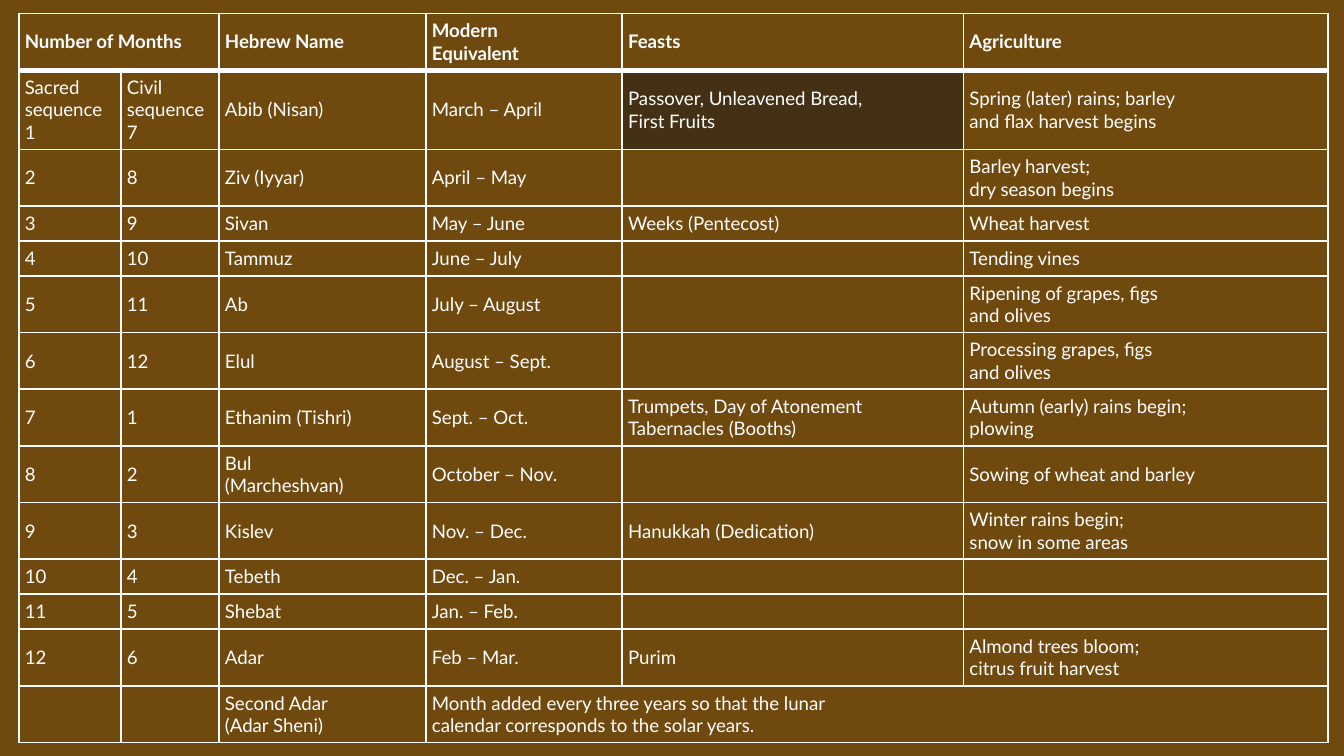
from typing import NamedTuple

from lxml import etree
from pptx import Presentation
from pptx.dml.color import RGBColor
from pptx.enum import text
from pptx.oxml import ns
from pptx.util import Inches, Pt

BROWN = RGBColor(0x70, 0x49, 0x0F)
DARK = RGBColor(0x19, 0x19, 0x19)
WHITE = RGBColor(0xFF, 0xFF, 0xFF)

FONT_NAME = "Lato"
FONT_SIZE = Pt(10)
MARGIN = Pt(3.2)
COLUMN_WIDTHS = (0.76, 0.73, 1.54, 1.46, 2.54, 2.71)
# Row height by the number of text lines in its tallest cell
ROW_HEIGHTS = {1: 0.26, 2: 0.42, 3: 0.59}
HIGHLIGHT = (1, 4)


class Month(NamedTuple):
    sacred: str
    civil: str
    hebrew: str
    modern: str
    feasts: str = ""
    agriculture: str = ""


# "\n" starts a paragraph, "\v" breaks a line
CALENDAR = [
    Month("Number of Months", "", "Hebrew Name", "Modern \vEquivalent",
          "Feasts", "Agriculture"),
    Month("Sacred\vsequence\n1", "Civil\vsequence\n7", "Abib (Nisan)", "March – April",
          "Passover, Unleavened Bread, \vFirst Fruits",
          "Spring (later) rains; barley \vand flax harvest begins"),
    Month("2", "8", "Ziv (Iyyar)", "April – May", "",
          "Barley harvest; \vdry season begins"),
    Month("3", "9", "Sivan", "May – June", "Weeks (Pentecost)", "Wheat harvest"),
    Month("4", "10", "Tammuz", "June – July", "", "Tending vines"),
    Month("5", "11", "Ab", "July – August", "",
          "Ripening of grapes, figs \vand olives"),
    Month("6", "12", "Elul", "August – Sept.", "",
          "Processing grapes, figs\vand olives"),
    Month("7", "1", "Ethanim (Tishri)", "Sept. – Oct.",
          "Trumpets, Day of Atonement\nTabernacles (Booths)",
          "Autumn (early) rains begin;\nplowing"),
    Month("8", "2", "Bul \v(Marcheshvan)", "October – Nov.", "",
          "Sowing of wheat and barley"),
    Month("9", "3", "Kislev", "Nov. – Dec.", "Hanukkah (Dedication)",
          "Winter rains begin; \vsnow in some areas"),
    Month("10", "4", "Tebeth", "Dec. – Jan."),
    Month("11", "5", "Shebat", "Jan. – Feb."),
    Month("12", "6", "Adar", "Feb – Mar.", "Purim",
          "Almond trees bloom; \vcitrus fruit harvest"),
    Month("", "", "Second Adar\v(Adar Sheni)",
          "Month added every three years so that the lunar\v"
          "calendar corresponds to the solar years."),
]


def line_count(entry: str) -> int:
    return 1 + entry.count("\n") + entry.count("\v")


def add_border(cell, side: str, width: int) -> None:
    properties = cell._tc.get_or_add_tcPr()
    line = etree.SubElement(properties, ns.qn(f"a:ln{side}"), w=str(width))
    solid = etree.SubElement(line, ns.qn("a:solidFill"))
    etree.SubElement(solid, ns.qn("a:srgbClr"), val=str(WHITE))


def fill_highlight(cell) -> None:
    cell.fill.solid()
    cell.fill.fore_color.rgb = DARK
    color = cell._tc.tcPr.find(f".//{ns.qn('a:srgbClr')}[@val='{DARK}']")
    etree.SubElement(color, ns.qn("a:alpha"), val="50000")


def write_entry(cell, entry: str, bold: bool) -> None:
    cell.text_frame.text = entry
    cell.vertical_anchor = text.MSO_ANCHOR.MIDDLE
    cell.margin_left = cell.margin_right = MARGIN
    cell.margin_top = cell.margin_bottom = MARGIN
    for paragraph in cell.text_frame.paragraphs:
        font = paragraph.font
        font.name, font.size, font.bold = FONT_NAME, FONT_SIZE, bold
        font.color.rgb = WHITE
        if not entry:  # keeps empty cells from stretching their row
            etree.SubElement(paragraph._p, ns.qn("a:endParaRPr"),
                             sz=str(int(FONT_SIZE.pt * 100)))


def add_calendar(slide) -> None:
    heights = [ROW_HEIGHTS[max(map(line_count, month))] for month in CALENDAR]
    calendar = slide.shapes.add_table(
        len(CALENDAR), len(COLUMN_WIDTHS), Inches(0.14), Inches(0.1),
        Inches(sum(COLUMN_WIDTHS)), Inches(sum(heights))).table
    calendar.horz_banding = False
    for column, width in zip(calendar.columns, COLUMN_WIDTHS):
        column.width = Inches(width)

    for r, (month, height) in enumerate(zip(CALENDAR, heights)):
        calendar.rows[r].height = Inches(height)
        for c, entry in enumerate(month):
            cell = calendar.cell(r, c)
            write_entry(cell, entry, bold=r == 0)
            # A thick rule parts the header from the months
            for side in "LRTB":
                thick = (r, side) in ((0, "B"), (1, "T"))
                add_border(cell, side, Pt(3 if thick else 1))
            if (r, c) == HIGHLIGHT:
                fill_highlight(cell)
            else:
                cell.fill.background()

    # Header over both sequences, and the closing note
    last = len(CALENDAR) - 1
    calendar.cell(0, 0).merge(calendar.cell(0, 1))
    calendar.cell(last, 3).merge(calendar.cell(last, 5))


def main() -> None:
    deck = Presentation()
    deck.slide_width = Inches(10)
    deck.slide_height = Inches(10 * 9 / 16)
    slide = deck.slides.add_slide(deck.slide_layouts[6])
    slide.background.fill.solid()
    slide.background.fill.fore_color.rgb = BROWN
    add_calendar(slide)
    deck.save("out.pptx")


if __name__ == "__main__":
    main()
